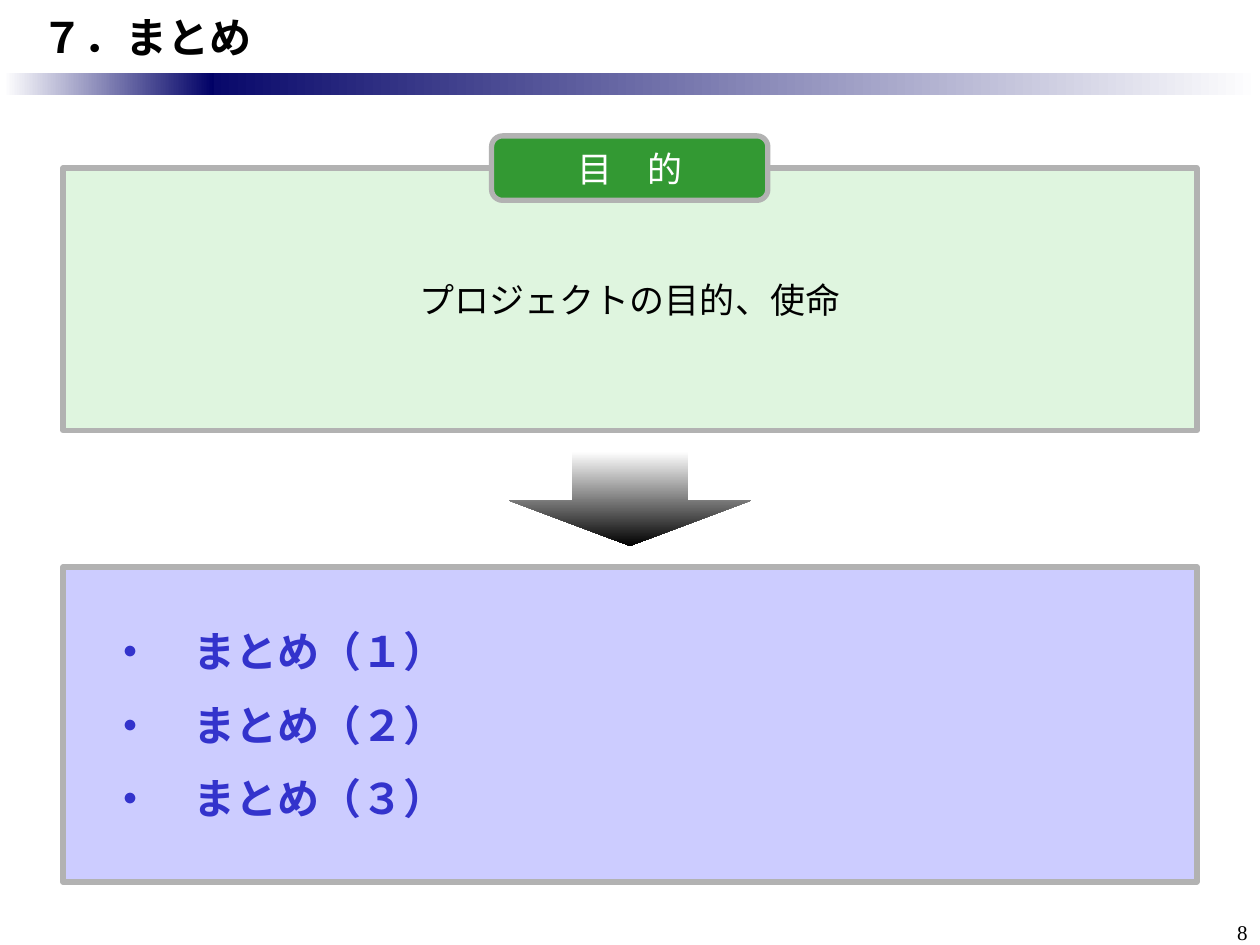
from dataclasses import dataclass
from typing import Optional

from pptx import Presentation, util as u
from pptx.dml.color import RGBColor
from pptx.enum import shapes, text
from pptx.oxml.ns import qn

SANS, SERIF = "Noto Sans CJK JP", "Times New Roman"
BLACK, WHITE, NAVY, GREY = "000000", "FFFFFF", "000066", "B2B2B2"
WIDTH, HEIGHT = 25.4, 19.05
MARGIN = 1.27
HEADER = 1.48


@dataclass
class Block:
    """A preset shape, in centimetres; two fill colours make a gradient."""
    left: float
    top: float
    width: float
    height: float
    fill: tuple[str, ...]
    kind: shapes.MSO_SHAPE = shapes.MSO_SHAPE.RECTANGLE
    line: Optional[str] = None
    adjust: tuple[float, ...] = ()
    rotation: float = 0


def color(value: str) -> RGBColor:
    return RGBColor.from_string(value)


def draw(page, block: Block):
    area = [u.Cm(v) for v in (block.left, block.top, block.width, block.height)]
    shape = page.shapes.add_shape(block.kind, *area)
    shape.shadow.inherit = False
    shape.rotation = block.rotation
    for index, value in enumerate(block.adjust):
        shape.adjustments[index] = value
    if len(block.fill) == 1:
        shape.fill.solid()
        shape.fill.fore_color.rgb = color(block.fill[0])
    else:
        shape.fill.gradient()
        shape.fill.gradient_angle = 0
        for stop, value in zip(shape.fill.gradient_stops, block.fill):
            stop.color.rgb = color(value)
    if block.line:
        shape.line.color.rgb = color(block.line)
        shape.line.width = u.Pt(3)
    else:
        shape.line.fill.background()
    return shape


def write(box, *lines: str, size: float, font: str = SANS, ink: str = BLACK,
          bold: bool = False, align=text.PP_ALIGN.LEFT,
          anchor=text.MSO_ANCHOR.MIDDLE, inset: float = 0.25, gap: float = 0):
    frame = box.text_frame
    frame.word_wrap = True
    frame.vertical_anchor = anchor
    frame.margin_left = u.Cm(inset)
    for index, line in enumerate(lines):
        para = frame.add_paragraph() if index else frame.paragraphs[0]
        para.alignment = align
        if index < len(lines) - 1:
            para.space_after = u.Pt(gap)
        span = para.add_run()
        span.text = line
        span.font.size = u.Pt(size)
        span.font.bold = bold
        span.font.color.rgb = color(ink)
        span.font.name = font
        east_asian = span.font._element.makeelement(qn("a:ea"), {"typeface": SANS})
        span.font._element.find(qn("a:latin")).addnext(east_asian)


def add_box(page, left: float, top: float, width: float, height: float):
    return page.shapes.add_textbox(u.Cm(left), u.Cm(top), u.Cm(width), u.Cm(height))


def main():
    deck = Presentation()
    deck.slide_width, deck.slide_height = u.Cm(WIDTH), u.Cm(HEIGHT)
    page = deck.slides.add_slide(deck.slide_layouts[6])
    center = text.PP_ALIGN.CENTER
    panel_width = WIDTH - 2 * MARGIN

    # Header band and page number
    draw(page, Block(3.6, HEADER, 21.8, 0.43, (NAVY, WHITE)))
    draw(page, Block(0.08, HEADER, 4.23, 0.43, (WHITE, NAVY)))
    write(add_box(page, 23.93, 18.42, 1.47, 0.63), "8", size=12, font=SERIF,
          align=text.PP_ALIGN.RIGHT, anchor=text.MSO_ANCHOR.TOP)

    # Summary panel
    summary = draw(page, Block(MARGIN, 11.43, panel_width, 6.35, ("CCCCFF",), line=GREY))
    write(summary, *(f"・　まとめ（{number}）" for number in "１２３"),
          size=24, ink="3333CC", bold=True, inset=0.94, gap=13.25)

    # Title
    write(add_box(page, 0, 0, WIDTH, HEADER), "７．まとめ", size=24, bold=True, inset=0.84)

    # Arrow from purpose to summary
    draw(page, Block(11.75, 7.62, 1.9, 4.87, (WHITE, BLACK),
                     kind=shapes.MSO_SHAPE.RIGHT_ARROW,
                     adjust=(0.48, 0.48), rotation=90))

    # Purpose panel with its tag
    purpose = draw(page, Block(MARGIN, 3.39, panel_width, 5.29, ("DFF5DF",), line=GREY))
    write(purpose, "プロジェクトの目的、使命", size=20, align=center)
    tag = draw(page, Block(9.91, 2.74, 5.57, 1.3, ("339933",), line=GREY,
                           kind=shapes.MSO_SHAPE.ROUNDED_RECTANGLE, adjust=(0.17,)))
    write(tag, "目　的", size=20, font=SERIF, ink=WHITE, align=center)

    deck.save("out.pptx")


if __name__ == "__main__":
    main()
